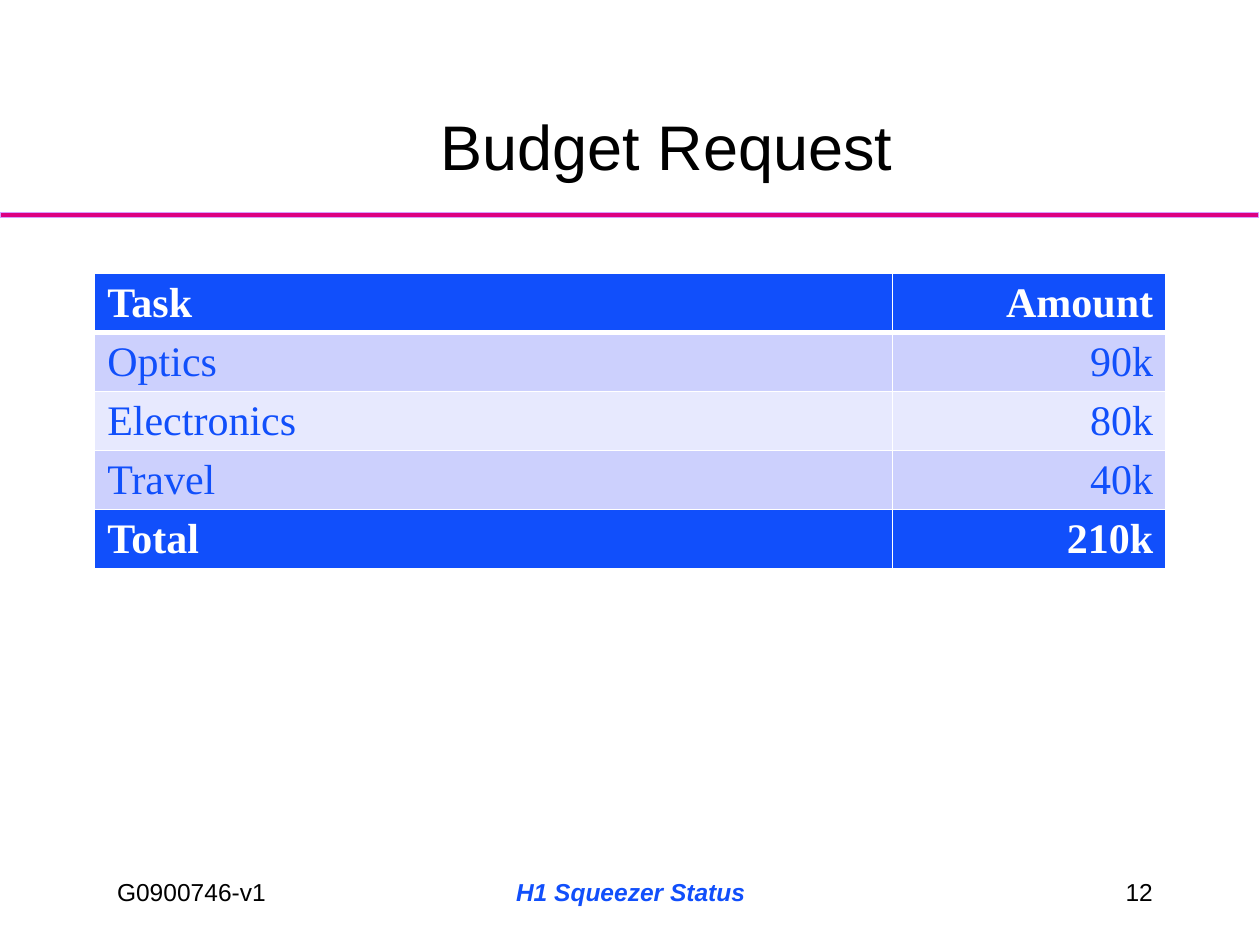
"""Build the budget request slide."""
from lxml.etree import SubElement
from pptx import Presentation
from pptx.dml.color import RGBColor
from pptx.enum.shapes import MSO_SHAPE
from pptx.enum.text import MSO_ANCHOR, PP_ALIGN
from pptx.oxml.ns import qn
from pptx.util import Cm, Pt

BLUE, WHITE, BLACK = "114FFB", "FFFFFF", "000000"
BANDS = ["CCD0FD", "E7E9FE"]
LEFT, CENTER, RIGHT = PP_ALIGN.LEFT, PP_ALIGN.CENTER, PP_ALIGN.RIGHT

ROWS = [
    ("Task", "Amount"),
    ("Optics", "90k"),
    ("Electronics", "80k"),
    ("Travel", "40k"),
    ("Total", "210k"),
]
COL_WIDTHS = [16.08, 5.51]
ROW_HEIGHT = 1.03
TEXTS = [
    ("G0900746-v1", (2.11, 17.55, 21.03, 0.86), MSO_ANCHOR.MIDDLE, dict(size=14)),
    ("Budget Request", (4.45, 0.64, 17.98, 3.18), MSO_ANCHOR.BOTTOM,
     dict(size=36, align=CENTER)),
    ("12", (18.21, 17.35, 5.28, 1.27), MSO_ANCHOR.MIDDLE, dict(size=14, align=RIGHT)),
    ("H1 Squeezer Status", (8.69, 17.35, 8.05, 1.27), MSO_ANCHOR.MIDDLE,
     dict(size=14, color=BLUE, align=CENTER, bold=True, italic=True)),
]


def rgb(value):
    return RGBColor.from_string(value)


def write(tf, text, size=24, font="Arial", color=BLACK, align=LEFT,
          bold=False, italic=False):
    p = tf.paragraphs[0]
    p.alignment = align
    r = p.add_run()
    r.text = text
    r.font.size, r.font.name = Pt(size), font
    r.font.bold, r.font.italic = bold, italic
    r.font.color.rgb = rgb(color)


def add_border(cell, side, width):
    ln = SubElement(cell._tc.get_or_add_tcPr(), qn(f"a:ln{side}"), w=str(Pt(width)))
    SubElement(SubElement(ln, qn("a:solidFill")), qn("a:srgbClr"), val=WHITE)


def add_rule(s):
    sp = s.shapes.add_shape(MSO_SHAPE.RECTANGLE, 0, Cm(4.29), Cm(25.37), Cm(0.1))
    sp.shadow.inherit = False
    sp.fill.solid()
    sp.fill.fore_color.rgb = rgb("DC0081")
    sp.line.color.rgb = rgb("D49FFF")
    sp.line.width = Pt(0.75)


def add_budget(s):
    table = s.shapes.add_table(
        len(ROWS), len(COL_WIDTHS), Cm(1.91), Cm(5.51),
        Cm(sum(COL_WIDTHS)), Cm(ROW_HEIGHT * len(ROWS))).table
    table.last_row = True
    for col, width in zip(table.columns, COL_WIDTHS):
        col.width = Cm(width)
    for i, values in enumerate(ROWS):
        table.rows[i].height = Cm(ROW_HEIGHT)
        strong = i in (0, len(ROWS) - 1)
        for j, value in enumerate(values):
            cell = table.cell(i, j)
            for side in "LRTB":
                thick = (i, side) in ((0, "B"), (1, "T"))
                add_border(cell, side, 3 if thick else 1)
            cell.fill.solid()
            cell.fill.fore_color.rgb = rgb(BLUE if strong else BANDS[(i - 1) % 2])
            write(cell.text_frame, value, font="Times New Roman", bold=strong,
                  color=WHITE if strong else BLUE, align=(LEFT, RIGHT)[j])


def add_text(s, text, box, anchor, fmt):
    tf = s.shapes.add_textbox(*map(Cm, box)).text_frame
    tf.word_wrap = True
    tf.vertical_anchor = anchor
    write(tf, text, **fmt)


def main():
    prs = Presentation()
    prs.slide_width, prs.slide_height = Cm(25.4), Cm(19.05)
    s = prs.slides.add_slide(prs.slide_layouts[6])
    add_rule(s)
    add_budget(s)
    for item in TEXTS:
        add_text(s, *item)
    prs.save("out.pptx")


if __name__ == "__main__":
    main()
